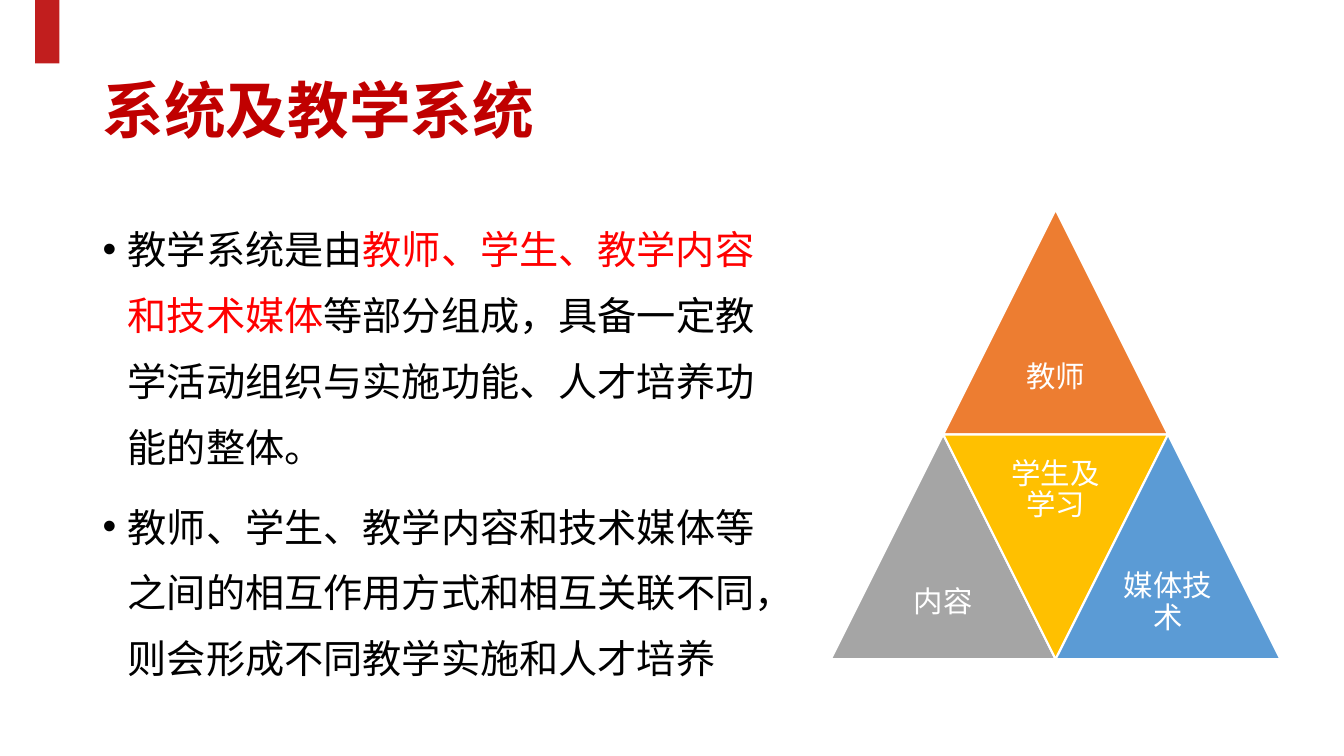
from pptx import Presentation
from pptx.dml.color import RGBColor
from pptx.enum.shapes import MSO_SHAPE
from pptx.enum.text import MSO_ANCHOR, PP_ALIGN
from pptx.oxml.ns import qn
from pptx.util import Inches, Pt
from lxml import etree

FONT = "Noto Sans CJK SC"


def color(hex_code):
    return RGBColor.from_string(hex_code)


def add_shape(page, kind, box, fill, outline=None):
    shape = page.shapes.add_shape(kind, *map(Inches, box))
    shape.shadow.inherit = False
    shape.fill.solid()
    shape.fill.fore_color.rgb = color(fill)
    if outline:
        shape.line.color.rgb = color(outline)
        shape.line.width = Pt(1.5)
    else:
        shape.line.fill.background()
    return shape


def add_text(page, box, paragraphs, size, spacing, anchor=MSO_ANCHOR.MIDDLE,
             bold=False, inset=None):
    """Each paragraph is a list of (text, colour) spans."""
    frame = page.shapes.add_textbox(*map(Inches, box)).text_frame
    frame.word_wrap = True
    frame.vertical_anchor = anchor
    if inset is not None:
        frame.margin_left = frame.margin_right = Inches(inset)
        frame.margin_top = frame.margin_bottom = Inches(inset)
    for index, spans in enumerate(paragraphs):
        para = frame.add_paragraph() if index else frame.paragraphs[0]
        para.line_spacing = spacing
        para.font.size = Pt(size)
        para.font.bold = bold
        para.font.name = FONT
        for text, hex_code in spans:
            span = para.add_run()
            span.text = text
            span.font.size = Pt(size)
            span.font.bold = bold
            span.font.color.rgb = color(hex_code)
            # Latin and East Asian typefaces
            span.font.name = FONT
            east_asian = etree.SubElement(span.font._element, qn("a:ea"))
            east_asian.set("typeface", FONT)
    return frame


def add_heading(page, box):
    add_shape(page, MSO_SHAPE.RECTANGLE, (0.35, 0, 0.24, 0.63), "C11E1E")
    add_text(page, box, [[("系统及教学系统", "C00000")]], 44, 0.9, bold=True)


def add_bullets(page, box):
    paragraphs = [
        [("教学系统是由", "000000"),
         ("教师、学生、教学内容和技术媒体", "FF0000"),
         ("等部分组成，具备一定教学活动组织与实施功能、人才培养功能的整体。", "000000")],
        [("教师、学生、教学内容和技术媒体等之间的相互作用方式和相互关联不同，"
          "则会形成不同教学实施和人才培养", "000000")],
    ]
    frame = add_text(page, box, paragraphs, 28, 1.4, MSO_ANCHOR.TOP)
    for para in frame.paragraphs:
        para.space_before = Pt(10)
        properties = para._p.get_or_add_pPr()
        properties.set("marL", str(Inches(0.25)))
        properties.set("indent", str(Inches(-0.25)))
        bullet_font = etree.Element(qn("a:buFont"), typeface="Arial")
        bullet = etree.Element(qn("a:buChar"), char="•")
        # Bullets follow the spacing and precede the default run settings
        defaults = properties.find(qn("a:defRPr"))
        defaults.addprevious(bullet_font)
        defaults.addprevious(bullet)


def add_pyramid(page, left, top, size):
    """Four triangles, each half of the pyramid's size."""
    side = size / 2
    # Label, fill, column and row in half sides, pointing down
    parts = [
        ("教师", "ED7D31", 1, 0, False),
        ("内容", "A5A5A5", 0, 2, False),
        ("学生及学习", "FFC000", 1, 2, True),
        ("媒体技术", "5B9BD5", 2, 2, False),
    ]
    for label, fill, column, row, inverted in parts:
        x, y = left + column * side / 2, top + row * side / 2
        triangle = add_shape(page, MSO_SHAPE.ISOSCELES_TRIANGLE,
                             (x, y, side, side), fill, "FFFFFF")
        triangle.rotation = 180 if inverted else 0
        label_top = y if inverted else y + side / 2
        frame = add_text(page, (x + side / 4, label_top, side / 2, side / 2),
                         [[(label, "FFFFFF")]], 21, 0.9, inset=0.09)
        frame.paragraphs[0].alignment = PP_ALIGN.CENTER


def main():
    deck = Presentation()
    deck.slide_width, deck.slide_height = Inches(13.33), Inches(7.5)
    page = deck.slides.add_slide(deck.slide_layouts[6])
    add_heading(page, (0.92, 0.4, 11.5, 1.45))
    add_bullets(page, (0.92, 2, 7.03, 4.76))
    add_pyramid(page, 8.24, 2.08, 4.46)
    deck.save("out.pptx")


if __name__ == "__main__":
    main()
